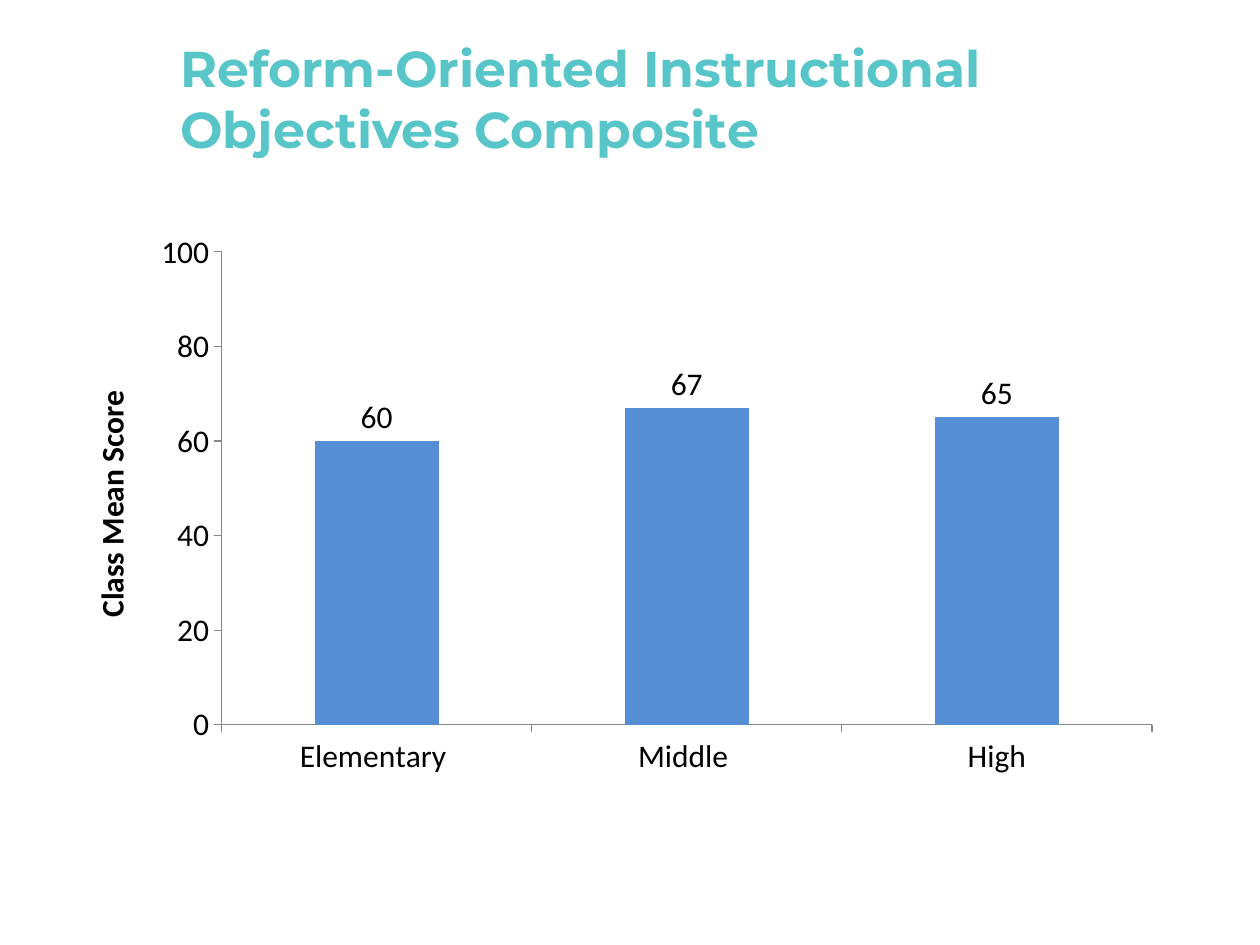
import dataclasses
import pptx
import pptx.chart.data
import pptx.dml.color
import pptx.enum.chart
import pptx.enum.text
import pptx.oxml
import pptx.oxml.ns
import pptx.util

Pt = pptx.util.Pt


@dataclasses.dataclass
class Theme:
    head: str = "58C5C9"
    bar: str = "558ED5"
    text: str = "000000"
    axis: str = "868686"
    head_font: str = "Montserrat"
    font: str = "Calibri"
    head_size: float = 28.8
    size: float = 18


class Deck:
    """Holds the theme and the current slide, and draws elements on it."""

    def __init__(self, theme, wide, high):
        self.theme = theme
        self.file = pptx.Presentation()
        self.file.slide_width, self.file.slide_height = Pt(wide), Pt(high)
        self.slide = self.file.slides.add_slide(self.file.slide_layouts[6])

    def style(self, font, name, size, color, bold=False):
        font.name, font.size, font.bold = name, Pt(size), bold
        font.color.rgb = pptx.dml.color.RGBColor.from_string(color)

    def title(self, box, text):
        frame = self.slide.shapes.add_textbox(*map(Pt, box)).text_frame
        frame.word_wrap = True
        frame.vertical_anchor = pptx.enum.text.MSO_ANCHOR.MIDDLE
        run = frame.paragraphs[0].add_run()
        run.text = text
        look = self.theme
        self.style(run.font, look.head_font, look.head_size, look.head, True)

    def axis(self, axis):
        axis.has_major_gridlines = False
        axis.major_tick_mark = pptx.enum.chart.XL_TICK_MARK.OUTSIDE
        axis.minor_tick_mark = pptx.enum.chart.XL_TICK_MARK.NONE
        line = axis.format.line
        line.width = Pt(0.75)
        line.color.rgb = pptx.dml.color.RGBColor.from_string(self.theme.axis)

    def layout(self, chart, x, y, w, h):
        parts = [("layoutTarget", "inner"), ("xMode", "edge"), ("yMode", "edge"),
                 ("x", x), ("y", y), ("w", w), ("h", h)]
        inner = "".join(f'<c:{tag} val="{val}"/>' for tag, val in parts)
        space = pptx.oxml.ns.nsdecls("c")
        node = pptx.oxml.parse_xml(
            f"<c:layout {space}><c:manualLayout>{inner}</c:manualLayout></c:layout>")
        plot = chart.plots[0]._element.getparent()
        for old in plot.findall(pptx.oxml.ns.qn("c:layout")):
            plot.remove(old)
        plot.insert(0, node)

    def chart(self, box, cats, name, vals, label, area):
        look = self.theme
        data = pptx.chart.data.CategoryChartData()
        data.categories = cats
        data.add_series(name, vals)
        kind = pptx.enum.chart.XL_CHART_TYPE.COLUMN_CLUSTERED
        chart = self.slide.shapes.add_chart(kind, *map(Pt, box), data).chart
        chart.has_legend = chart.has_title = False
        self.style(chart.font, look.font, look.size, look.text)
        self.layout(chart, *area)

        plot = chart.plots[0]
        plot.gap_width, plot.vary_by_categories = 150, False
        fill = plot.series[0].format.fill
        fill.solid()
        fill.fore_color.rgb = pptx.dml.color.RGBColor.from_string(look.bar)
        plot.has_data_labels = True
        plot.data_labels.show_value = True
        plot.data_labels.position = pptx.enum.chart.XL_LABEL_POSITION.OUTSIDE_END

        self.axis(chart.category_axis)
        scale = chart.value_axis
        self.axis(scale)
        scale.minimum_scale, scale.maximum_scale, scale.major_unit = 0, 100, 20
        frame = scale.axis_title.text_frame
        frame._txBody.bodyPr.set("rot", "-5400000")
        frame._txBody.bodyPr.set("vert", "horz")
        run = frame.paragraphs[0].add_run()
        run.text = label
        self.style(run.font, look.font, look.size, look.text, True)


def main():
    deck = Deck(Theme(), 720, 540)
    deck.title((96, 21.6, 588, 68.4),
               "Reform-Oriented Instructional Objectives Composite")
    deck.chart((48, 126, 624, 326), ["Elementary ", "Middle ", "High"],
               "Series 1", [60, 67, 65], "Class Mean Score",
               (0.126, 0.055, 0.852, 0.829))
    deck.file.save("out.pptx")


if __name__ == "__main__":
    main()
